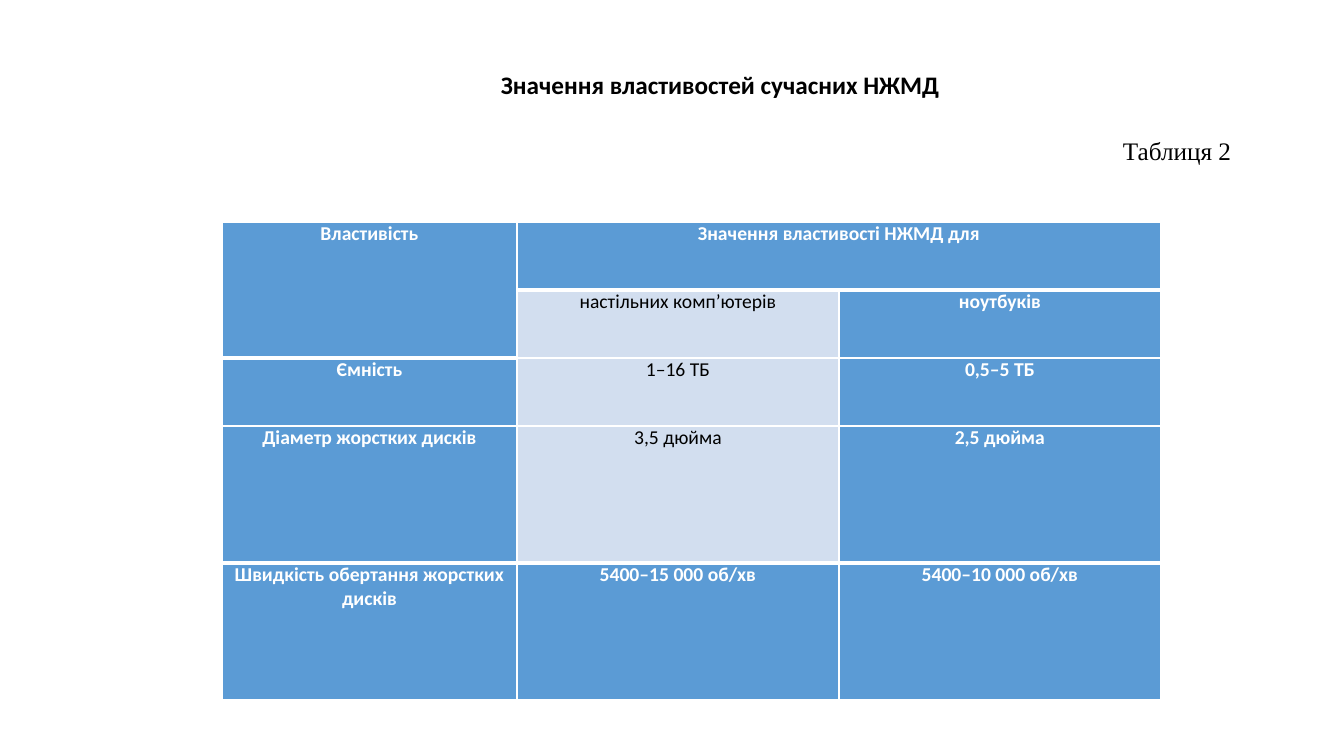
from lxml.etree import SubElement
from pptx import Presentation
from pptx.dml.color import RGBColor
from pptx.enum.text import MSO_AUTO_SIZE, PP_ALIGN
from pptx.oxml.ns import qn
from pptx.util import Emu, Pt

PX = 914400 / 100.8
WHITE, BLACK, BLUE, PALE_BLUE = "FFFFFF", "000000", "5B9BD5", "D2DEEF"


def px(*lengths):
    return [Emu(round(length * PX)) for length in lengths]


def write(paragraph, text, color, **font_format):
    run = paragraph.add_run()
    run.text = text
    run.font.color.rgb = RGBColor.from_string(color)
    for name, value in font_format.items():
        setattr(run.font, name, value)


presentation = Presentation()
presentation.slide_width, presentation.slide_height = px(1344, 756)
slide = presentation.slides.add_slide(presentation.slide_layouts[6])

captions = [
    ("Значення властивостей сучасних НЖМД", (491, 64, 464, 40), "Calibri", True),
    ("Таблиця 2", (1113, 130, 129, 40), "Times New Roman", False),
]
for text, box, font_name, bold in captions:
    text_frame = slide.shapes.add_textbox(*px(*box)).text_frame
    text_frame.word_wrap = False
    text_frame.auto_size = MSO_AUTO_SIZE.SHAPE_TO_FIT_TEXT
    write(text_frame.paragraphs[0], text, BLACK, name=font_name, size=Pt(18), bold=bold)

rows = [
    ("Властивість", "Значення властивості НЖМД для", ""),
    ("", "настільних комп’ютерів", "ноутбуків"),
    ("Ємність", "1–16 ТБ", "0,5–5 ТБ"),
    ("Діаметр жорстких дисків", "3,5 дюйма", "2,5 дюйма"),
    ("Швидкість обертання жорстких дисків", "5400–15 000 об/хв", "5400–10 000 об/хв"),
]
column_widths = px(295, 322, 322)
row_heights = px(68, 68, 68, 137, 137)
# Cells (row, column) with a heavy rule below: the header and the row above the last
thick_below = {(0, 0), (1, 0), (0, 1), (0, 2), (3, 0), (3, 1), (3, 2)}

table = slide.shapes.add_table(
    len(rows), len(column_widths), *px(222, 222), sum(column_widths), sum(row_heights)
).table
table.first_row = table.horz_banding = False
for column, width in zip(table.columns, column_widths):
    column.width = width
for row, height in zip(table.rows, row_heights):
    row.height = height
table.cell(0, 0).merge(table.cell(1, 0))
table.cell(0, 1).merge(table.cell(0, 2))

cell_margins = {f"margin_{side}": 0 for side in ("left", "right", "top", "bottom")}
for row_index, texts in enumerate(rows):
    for column_index, text in enumerate(texts):
        cell = table.cell(row_index, column_index)
        for name, value in cell_margins.items():
            setattr(cell, name, value)

        border_points = {
            "L": 1,
            "R": 1,
            "T": 3 if (row_index - 1, column_index) in thick_below else 1,
            "B": 3 if (row_index, column_index) in thick_below else 1,
        }
        properties = cell._tc.get_or_add_tcPr()
        for side, points in border_points.items():
            line = SubElement(properties, qn(f"a:ln{side}"), w=str(Pt(points)))
            SubElement(SubElement(line, qn("a:solidFill")), qn("a:srgbClr"), val=WHITE)

        is_pale = column_index == 1 and 1 <= row_index <= 3
        cell.fill.solid()
        cell.fill.fore_color.rgb = RGBColor.from_string(PALE_BLUE if is_pale else BLUE)
        if text:
            paragraph = cell.text_frame.paragraphs[0]
            paragraph.alignment = PP_ALIGN.CENTER
            write(paragraph, text, BLACK if is_pale else WHITE,
                  name="Calibri", size=Pt(14), bold=not is_pale)

presentation.save("out.pptx")
